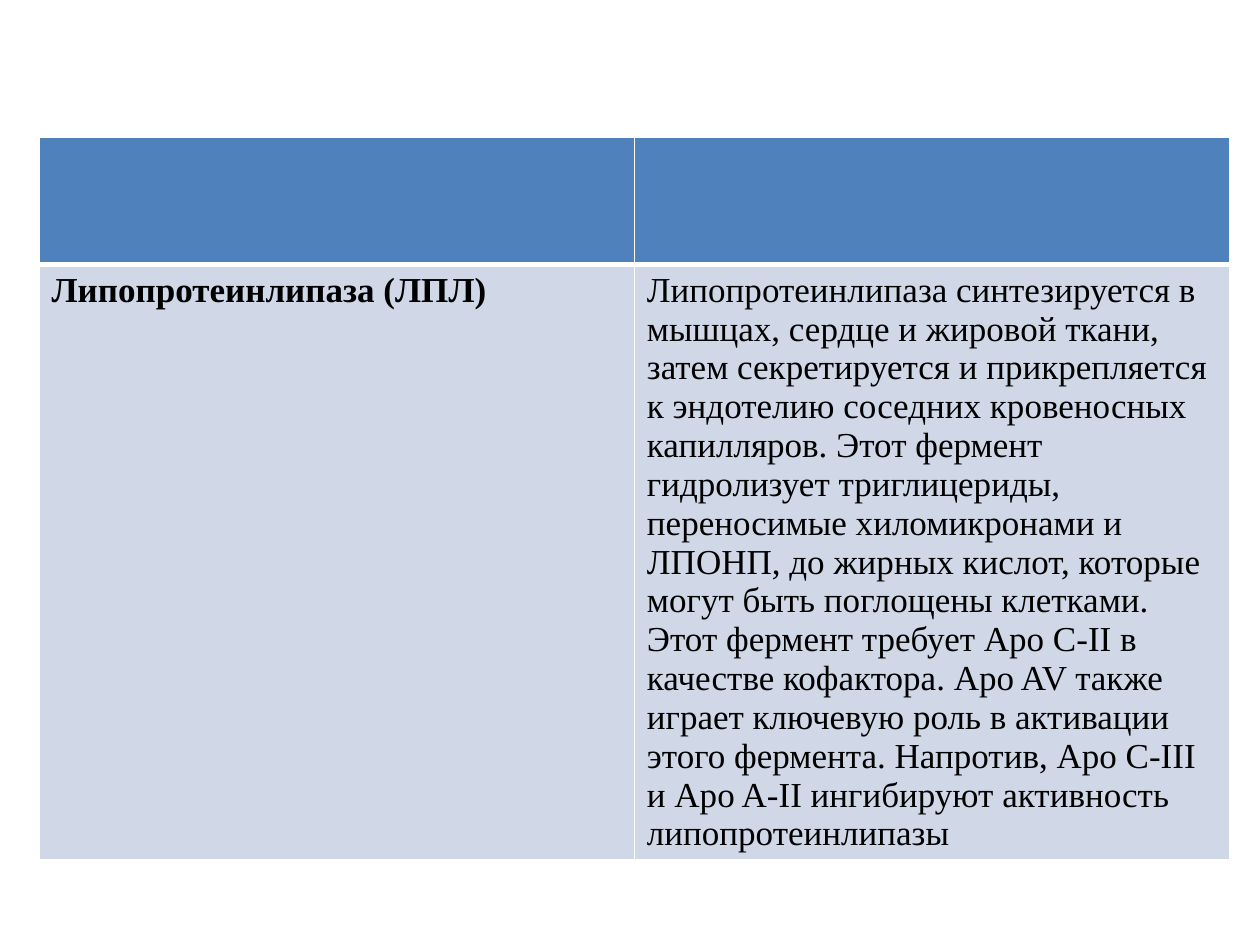
from dataclasses import dataclass

from lxml.etree import SubElement
from pptx import Presentation
from pptx.dml.color import RGBColor
from pptx.oxml.ns import qn
from pptx.util import Inches, Pt


@dataclass(frozen=True)
class Theme:
    header: str = "4F81BD"
    body: str = "D0D8E8"
    border: str = "FFFFFF"
    text: str = "000000"
    font: str = "Times New Roman"
    size: int = 20
    thin: int = 1
    thick: int = 3


theme = Theme()


def set_borders(cell, widths):
    tcPr = cell._tc.get_or_add_tcPr()
    for side, width in zip("LRTB", widths):
        ln = SubElement(tcPr, qn(f"a:ln{side}"), w=str(Pt(width)))
        fill = SubElement(ln, qn("a:solidFill"))
        SubElement(fill, qn("a:srgbClr"), val=theme.border)


prs = Presentation()
prs.slide_width, prs.slide_height = Inches(10), Inches(7.5)
s = prs.slides.add_slide(prs.slide_layouts[6])

rows = [
    ("", ""),
    (
        "Липопротеинлипаза (ЛПЛ)",
        "Липопротеинлипаза синтезируется в мышцах, сердце и жировой ткани, "
        "затем секретируется и прикрепляется к эндотелию соседних кровеносных "
        "капилляров. Этот фермент гидролизует триглицериды, переносимые "
        "хиломикронами и ЛПОНП, до жирных кислот, которые могут быть поглощены "
        "клетками. Этот фермент требует Apo C-II в качестве кофактора. Apo AV "
        "также играет ключевую роль в активации этого фермента. Напротив, "
        "Apo C-III и Apo A-II ингибируют активность липопротеинлипазы",
    ),
]
row_heights = [1.01, 4.72]

table = s.shapes.add_table(
    len(rows), 2, Inches(0.31), Inches(1.09), Inches(9.45), Inches(sum(row_heights))
).table

for r, (texts, height) in enumerate(zip(rows, row_heights)):
    table.rows[r].height = Inches(height)
    is_header = r == 0
    top = theme.thick if r == 1 else theme.thin
    bottom = theme.thick if is_header else theme.thin
    for c, text in enumerate(texts):
        cell = table.cell(r, c)
        set_borders(cell, (theme.thin, theme.thin, top, bottom))
        cell.fill.solid()
        cell.fill.fore_color.rgb = RGBColor.from_string(theme.header if is_header else theme.body)
        if text:
            cell.text = text
            p = cell.text_frame.paragraphs[0]
            p.font.name = theme.font
            p.font.size = Pt(theme.size)
            p.font.bold = c == 0
            p.font.color.rgb = RGBColor.from_string(theme.text)

prs.save("out.pptx")
